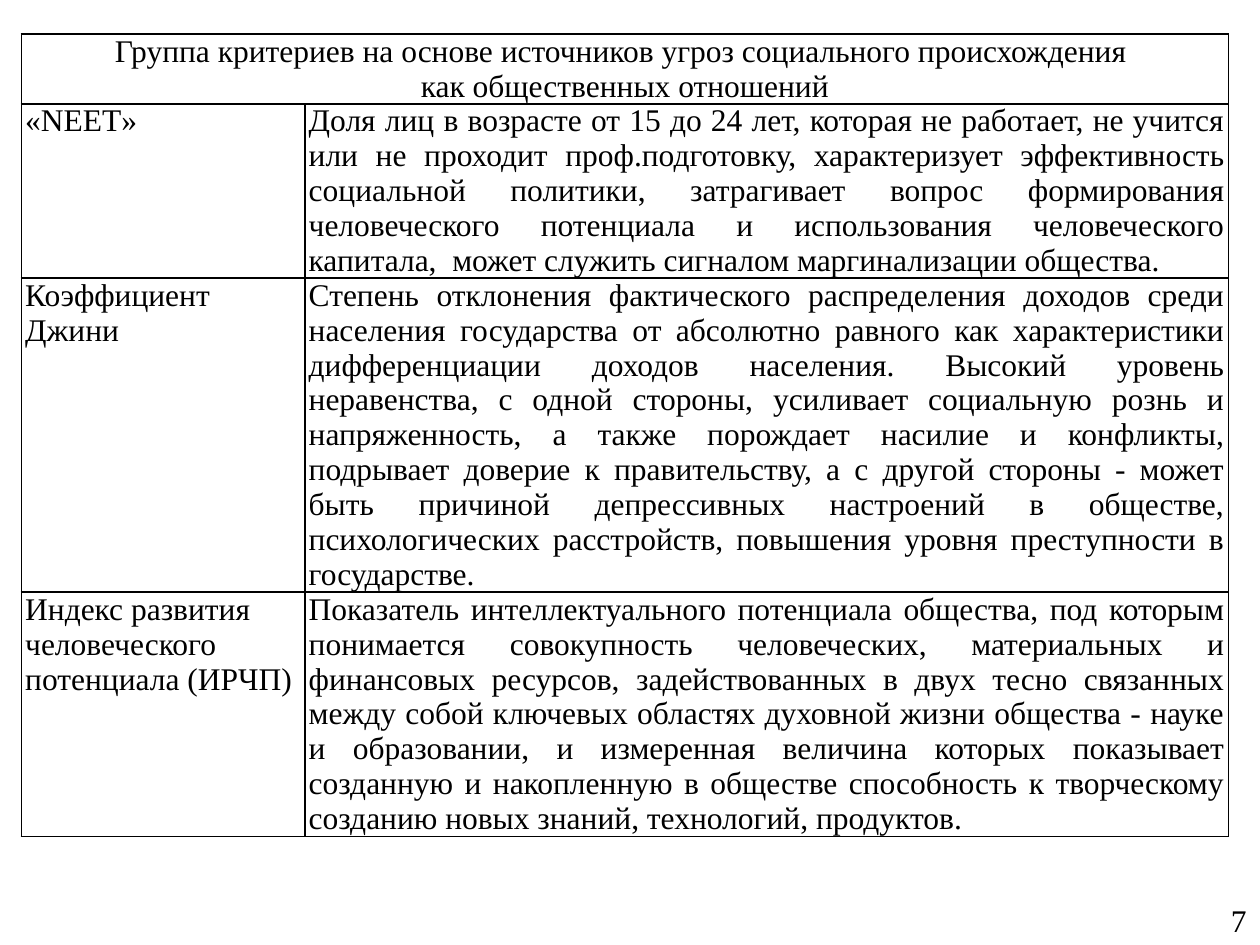
"""Builds a slide with a table of social threat criteria."""
from lxml import etree
from pptx import Presentation
from pptx.dml.color import RGBColor
from pptx.enum.text import PP_ALIGN
from pptx.oxml.ns import qn
from pptx.util import Inches, Pt

LEFT, CENTER, JUSTIFY = PP_ALIGN.LEFT, PP_ALIGN.CENTER, PP_ALIGN.JUSTIFY
COLORS = {"ink": "000000"}
FONT, SIZE = "Times New Roman", 18
TITLE = ("Группа критериев на основе источников угроз социального происхождения \n"
         "как общественных отношений")
CRITERIA = [
    ("«NEET»",
     "Доля лиц в возрасте от 15 до 24 лет, которая не работает, не учится или не "
     "проходит проф.подготовку, характеризует эффективность социальной политики, "
     "затрагивает вопрос формирования человеческого потенциала и использования "
     "человеческого капитала,  может служить сигналом маргинализации общества."),
    ("Коэффициент Джини",
     "Степень отклонения фактического распределения доходов среди населения "
     "государства от абсолютно равного как характеристики дифференциации доходов "
     "населения. Высокий уровень неравенства, с одной стороны, усиливает социальную "
     "рознь и напряженность, а также порождает насилие и конфликты, подрывает доверие "
     "к правительству, а с другой стороны - может быть причиной депрессивных "
     "настроений в обществе, психологических расстройств, повышения уровня "
     "преступности в государстве."),
    ("Индекс развития человеческого потенциала (ИРЧП)",
     "Показатель интеллектуального потенциала общества, под которым понимается "
     "совокупность человеческих, материальных и финансовых ресурсов, задействованных "
     "в двух тесно связанных между собой ключевых областях духовной жизни общества - "
     "науке и образовании, и измеренная величина которых показывает созданную и "
     "накопленную в обществе способность к творческому созданию новых знаний, "
     "технологий, продуктов."),
]
PAGE = "7"
COLS = (2.25, 7.33)
ROW_LINES, LINE = (2, 5, 9, 7), 0.27
TABLE_LEFT, TABLE_TOP = 0.17, 0.27
PAGE_BOX = (9.67, 7.1, 0.33, 0.4)


def write(tf, text, align):
    tf.text = text
    for p in tf.paragraphs:
        p.alignment = align
        p.font.name, p.font.size = FONT, Pt(SIZE)
        p.font.color.rgb = RGBColor.from_string(COLORS["ink"])


def add_borders(cell):
    tc_pr = cell._tc.get_or_add_tcPr()
    for i, side in enumerate(("lnL", "lnR", "lnT", "lnB")):
        ln = etree.Element(qn(f"a:{side}"), w=str(Pt(1)))
        fill = etree.SubElement(ln, qn("a:solidFill"))
        etree.SubElement(fill, qn("a:srgbClr"), val=COLORS["ink"])
        tc_pr.insert(i, ln)


def add_criteria_table(s):
    rows = [(TITLE, "")] + CRITERIA
    table = s.shapes.add_table(
        len(rows), len(COLS), Inches(TABLE_LEFT), Inches(TABLE_TOP),
        Inches(sum(COLS)), Inches(sum(ROW_LINES) * LINE)).table
    table.first_row = table.horz_banding = False
    for column, width in zip(table.columns, COLS):
        column.width = Inches(width)
    for row, lines in zip(table.rows, ROW_LINES):
        row.height = Inches(lines * LINE)
    table.cell(0, 0).merge(table.cell(0, len(COLS) - 1))
    for i, texts in enumerate(rows):
        for j, text in enumerate(texts):
            cell = table.cell(i, j)
            cell.margin_left = cell.margin_right = Inches(0.03)
            cell.margin_top = cell.margin_bottom = 0
            cell.fill.background()
            add_borders(cell)
            write(cell.text_frame, text, (LEFT, JUSTIFY)[j] if i else CENTER)


def main():
    prs = Presentation()
    prs.slide_width, prs.slide_height = Inches(10), Inches(7.5)
    s = prs.slides.add_slide(prs.slide_layouts[6])
    add_criteria_table(s)
    tf = s.shapes.add_textbox(*map(Inches, PAGE_BOX)).text_frame
    tf.word_wrap = False
    write(tf, PAGE, LEFT)
    prs.save("out.pptx")


if __name__ == "__main__":
    main()
